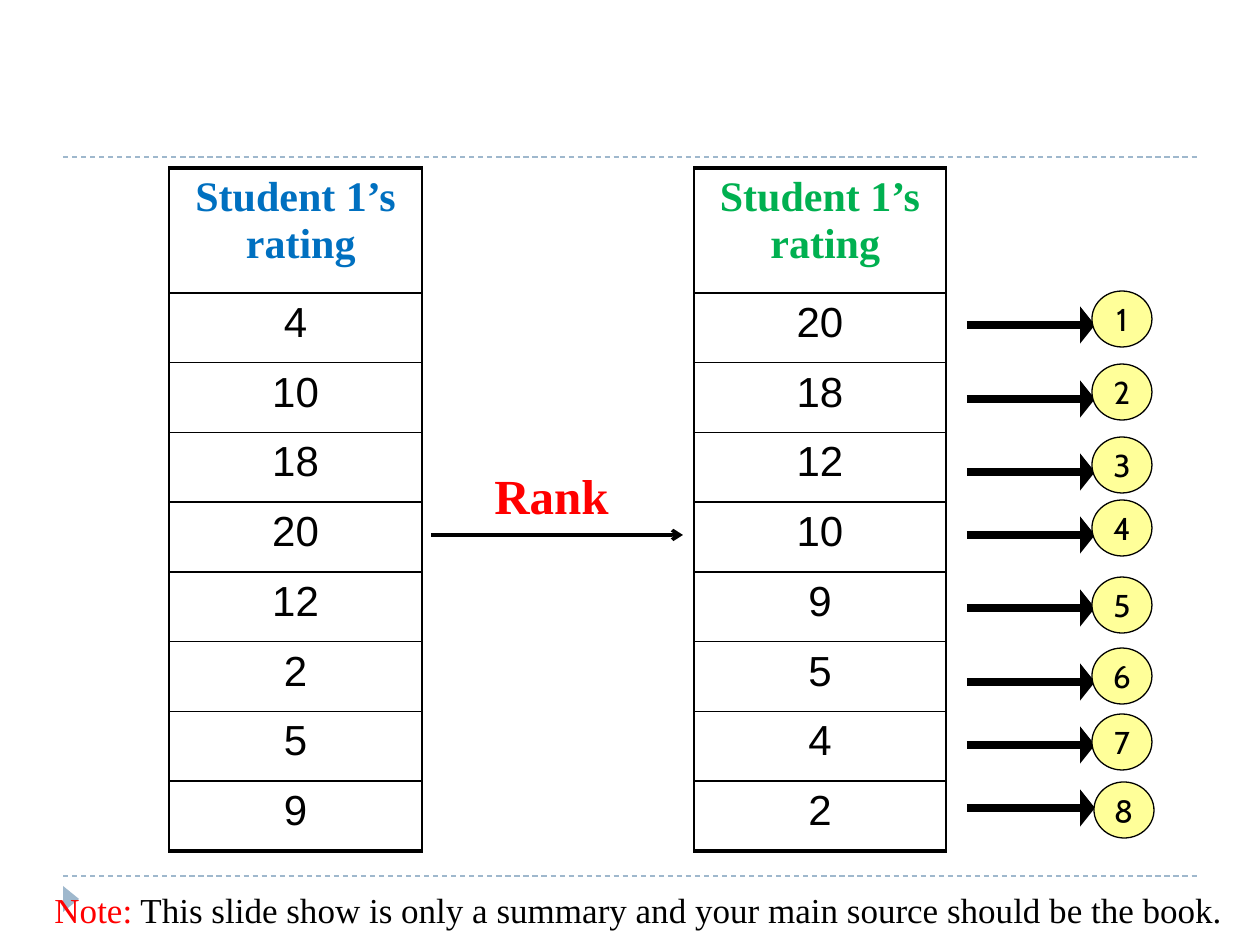
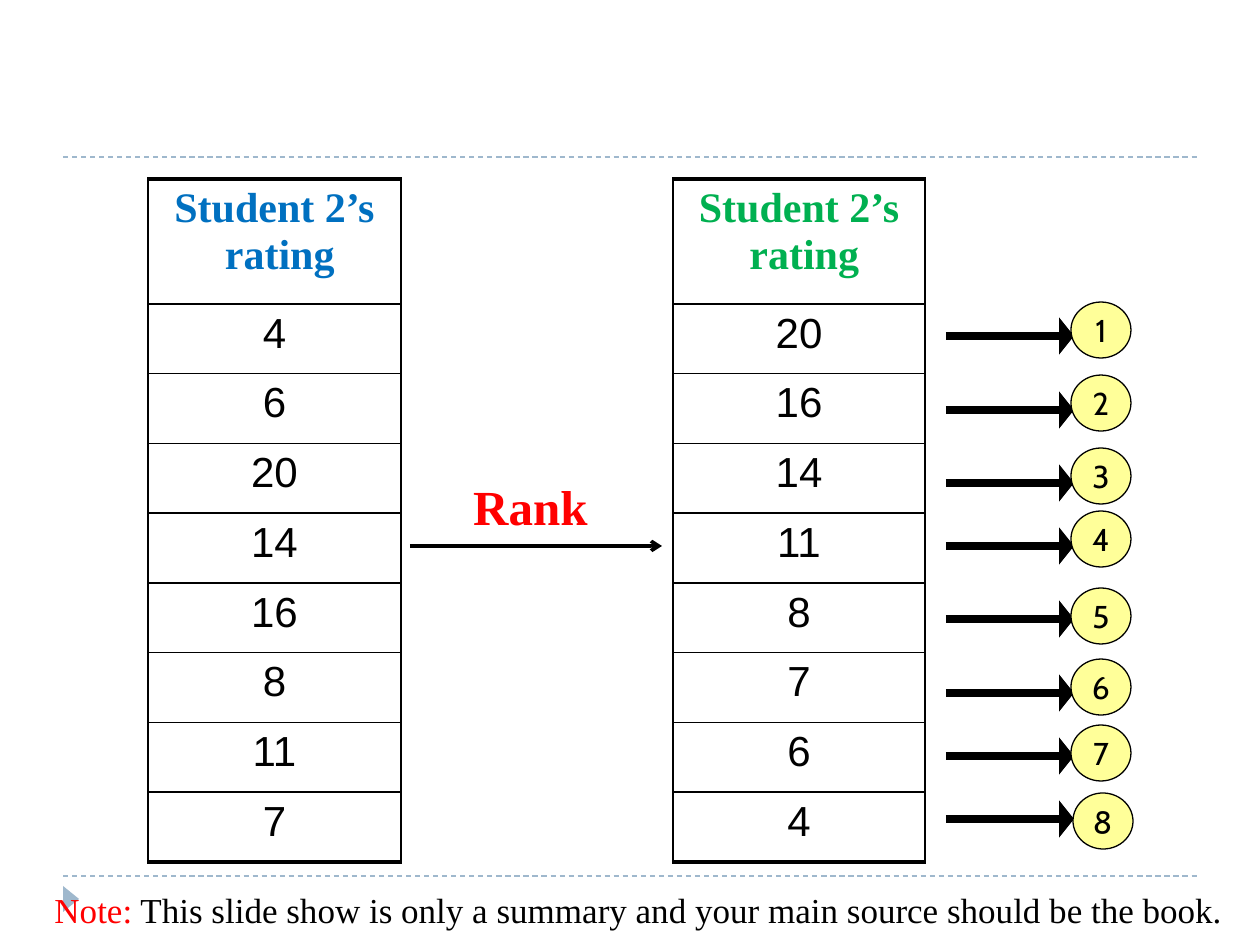
"""Builds two slides that turn a student's ratings into ranks."""
from dataclasses import dataclass
from typing import Optional

from lxml import etree
from pptx import Presentation
from pptx.dml.color import RGBColor
from pptx.enum.dml import MSO_LINE
from pptx.enum.shapes import MSO_CONNECTOR, MSO_SHAPE
from pptx.enum.text import MSO_ANCHOR, MSO_AUTO_SIZE, PP_ALIGN
from pptx.oxml.ns import qn
from pptx.util import Emu, Pt

STRAIGHT = MSO_CONNECTOR.STRAIGHT
OVAL, RECTANGLE, TRIANGLE = MSO_SHAPE.OVAL, MSO_SHAPE.RECTANGLE, MSO_SHAPE.ISOSCELES_TRIANGLE
CENTER, MIDDLE = PP_ALIGN.CENTER, MSO_ANCHOR.MIDDLE
GROW, DASH = MSO_AUTO_SIZE.SHAPE_TO_FIT_TEXT, MSO_LINE.DASH

EMU_PER_INCH, PX_PER_INCH = 914400, 126
BLANK_LAYOUT = 6
SERIF, SANS, NUMBER_FONT = "Times New Roman", "Cabin", "Arial"
COLORS = {
    "black": "000000",
    "white": "FFFFFF",
    "red": "FF0000",
    "given": "0070C0",
    "ranked": "00B050",
    "badge": "FFFF99",
    "decor": "9FB8CD",
}
HEADER_HEIGHT, BODY_HEIGHT = 125, 558
THIN, THICK = 1, 2.25


@dataclass(frozen=True)
class Box:
    """A place on the slide, in px."""
    left: int
    top: int
    width: int
    height: int

    def moved(self, right: int, down: int) -> "Box":
        """Return the box shifted by an offset."""
        return Box(self.left + right, self.top + down, self.width, self.height)

    def emu(self) -> list[Emu]:
        """Return left, top, width and height in EMU."""
        return [px(value) for value in (self.left, self.top, self.width, self.height)]


@dataclass(frozen=True)
class Arrowhead:
    """Kind and size of the end of a line."""
    kind: str
    width: str = "med"
    length: str = "med"


@dataclass(frozen=True)
class RankMark:
    """A rank circle and the arrow that leads to it."""
    arrow_y: int
    badge_top: int
    badge_left: int = 1092
    rotation: int = 0


@dataclass(frozen=True)
class RatingSlide:
    """One student's ratings and the offset of the diagram."""
    heading: str
    ratings: list[int]
    right: int = 0
    down: int = 0


RANK_MARKS = [
    RankMark(325, 291),
    RankMark(399, 364),
    RankMark(472, 437),
    RankMark(535, 500),
    RankMark(608, 577),
    RankMark(682, 648),
    RankMark(745, 714),
    RankMark(808, 782, 1094, 3),
]
RATING_SLIDES = [
    RatingSlide("Student 1’s rating ", [4, 10, 18, 20, 12, 2, 5, 9]),
    RatingSlide("Student 2’s rating ", [4, 6, 20, 14, 16, 8, 11, 7], -21, 11),
]


def px(value: int) -> Emu:
    """Turn px into EMU."""
    return Emu(round(value * EMU_PER_INCH / PX_PER_INCH))


def rgb(name: str) -> RGBColor:
    """Look up a named colour."""
    return RGBColor.from_string(COLORS[name])


def add_text(paragraph, text: str, *, size: int, font: str = SERIF, color: str = "black",
             bold: bool = False, complex_font: Optional[str] = None) -> None:
    """Add a formatted run to a paragraph."""
    run = paragraph.add_run()
    run.text = text
    run.font.size = Pt(size)
    run.font.bold = bold
    run.font.color.rgb = rgb(color)
    run.font.name = font
    if complex_font:
        properties = run.font._element
        etree.SubElement(properties, qn("a:cs"), typeface=complex_font)


def add_line(slide, start: tuple[int, int], end: tuple[int, int], *, color: str = "black",
             width: float, dash=None, head: Optional[Arrowhead] = None) -> None:
    """Draw a straight line, with an arrowhead if asked."""
    connector = slide.shapes.add_connector(STRAIGHT, *map(px, (*start, *end)))
    connector.line.color.rgb = rgb(color)
    connector.line.width = Pt(width)
    if dash is not None:
        connector.line.dash_style = dash
    properties = connector._element.spPr
    if head:
        etree.SubElement(properties.find(qn("a:ln")), qn("a:tailEnd"),
                         type=head.kind, w=head.width, len=head.length)
    etree.SubElement(properties, qn("a:effectLst"))


def add_figure(slide, kind, box: Box, *, fill: str, outline: Optional[str] = None,
               rotation: int = 0, opacity: int = 100):
    """Draw a preset shape with centred, unwrapped text."""
    shape = slide.shapes.add_shape(kind, *box.emu())
    shape.shadow.inherit = False
    shape.rotation = rotation
    shape.fill.solid()
    shape.fill.fore_color.rgb = rgb(fill)
    if opacity < 100:
        color = shape._element.spPr.find(".//" + qn("a:srgbClr"))
        etree.SubElement(color, qn("a:alpha"), val=str(opacity * 1000))
    if outline:
        shape.line.color.rgb = rgb(outline)
        shape.line.width = Pt(0.75)
    else:
        shape.line.fill.background()
    shape.text_frame.word_wrap = False
    shape.text_frame.vertical_anchor = MIDDLE
    shape.text_frame.paragraphs[0].alignment = CENTER
    return shape


def set_borders(cell, *, top: float, bottom: float) -> None:
    """Give a cell black borders of the given widths in points."""
    properties = cell._tc.get_or_add_tcPr()
    widths = {"lnL": THIN, "lnR": THIN, "lnT": top, "lnB": bottom}
    for tag, width in widths.items():
        border = etree.SubElement(properties, qn(f"a:{tag}"), w=str(Pt(width)))
        fill = etree.SubElement(border, qn("a:solidFill"))
        etree.SubElement(fill, qn("a:srgbClr"), val=COLORS["black"])


def add_rating_table(slide, box: Box, heading: str, ratings: list[int], color: str) -> None:
    """Draw a one-column table with a coloured heading."""
    row_count = len(ratings) + 1
    table = slide.shapes.add_table(row_count, 1, *box.emu()).table
    table.first_row = table.horz_banding = False
    for index, text in enumerate([heading, *map(str, ratings)]):
        is_heading = index == 0
        table.rows[index].height = px(HEADER_HEIGHT) if is_heading else px(BODY_HEIGHT) // len(ratings)
        cell = table.cell(index, 0)
        set_borders(cell, top=THICK if is_heading else THIN,
                    bottom=THICK if index == row_count - 1 else THIN)
        cell.fill.solid()
        cell.fill.fore_color.rgb = rgb("white")
        paragraph = cell.text_frame.paragraphs[0]
        paragraph.alignment = CENTER
        paragraph._p.get_or_add_pPr().set("rtl", "1")
        add_text(paragraph, text, size=24, bold=is_heading,
                 color=color if is_heading else "black",
                 complex_font=SERIF if is_heading else NUMBER_FONT)


def add_frame(slide) -> None:
    """Draw the dashed rules and the corner triangle."""
    for y in (876, 157):
        add_line(slide, (63, y), (1197, y), color="decor", width=0.75, dash=DASH)
    add_figure(slide, TRIANGLE, Box(58, 891, 26, 16), fill="decor", rotation=90)


def add_note(slide) -> None:
    """Write the note at the foot of the slide."""
    frame = slide.shapes.add_textbox(*Box(42, 882, 1229, 55).emu()).text_frame
    frame.word_wrap = True
    frame.auto_size = GROW
    paragraph = frame.paragraphs[0]
    add_text(paragraph, "Note:", size=20, color="red")
    add_text(paragraph, " This slide show is only a summary and your main source should be the book.",
             size=20)


def add_rank_step(slide, right: int, down: int) -> None:
    """Draw the labelled arrow between the two tables."""
    label = add_figure(slide, RECTANGLE, Box(484, 465, 147, 59).moved(right, down),
                       fill="white", opacity=47)
    add_text(label.text_frame.paragraphs[0], "Rank ", size=28, color="red", bold=True)
    y = 535 + down
    add_line(slide, (431 + right, y), (683 + right, y), width=2, head=Arrowhead("arrow"))


def add_rank_marks(slide, right: int, down: int) -> None:
    """Draw the arrows and the numbered circles."""
    for mark in RANK_MARKS:
        y = mark.arrow_y + down
        add_line(slide, (967 + right, y), (1095 + right, y), width=4.25,
                 head=Arrowhead("triangle", "lg", "sm"))
    for rank, mark in enumerate(RANK_MARKS, start=1):
        box = Box(mark.badge_left, mark.badge_top, 60, 56).moved(right, down)
        badge = add_figure(slide, OVAL, box, fill="badge", outline="black", rotation=mark.rotation)
        add_text(badge.text_frame.paragraphs[0], str(rank), size=18, font=SANS)


def add_rating_slide(presentation, content: RatingSlide) -> None:
    """Build one slide: ratings as given, then in rank order."""
    slide = presentation.slides.add_slide(presentation.slide_layouts[BLANK_LAYOUT])
    add_frame(slide)
    offset = content.right, content.down
    height = HEADER_HEIGHT + BODY_HEIGHT
    add_rating_table(slide, Box(169, 168, 253, height).moved(*offset),
                     content.heading, content.ratings, "given")
    add_rating_table(slide, Box(694, 168, 252, height).moved(*offset),
                     content.heading, sorted(content.ratings, reverse=True), "ranked")
    add_rank_marks(slide, *offset)
    add_rank_step(slide, *offset)
    add_note(slide)


def main() -> None:
    """Build and save the presentation."""
    presentation = Presentation()
    presentation.slide_width, presentation.slide_height = px(1260), px(945)
    for content in RATING_SLIDES:
        add_rating_slide(presentation, content)
    presentation.save("out.pptx")


if __name__ == "__main__":
    main()
